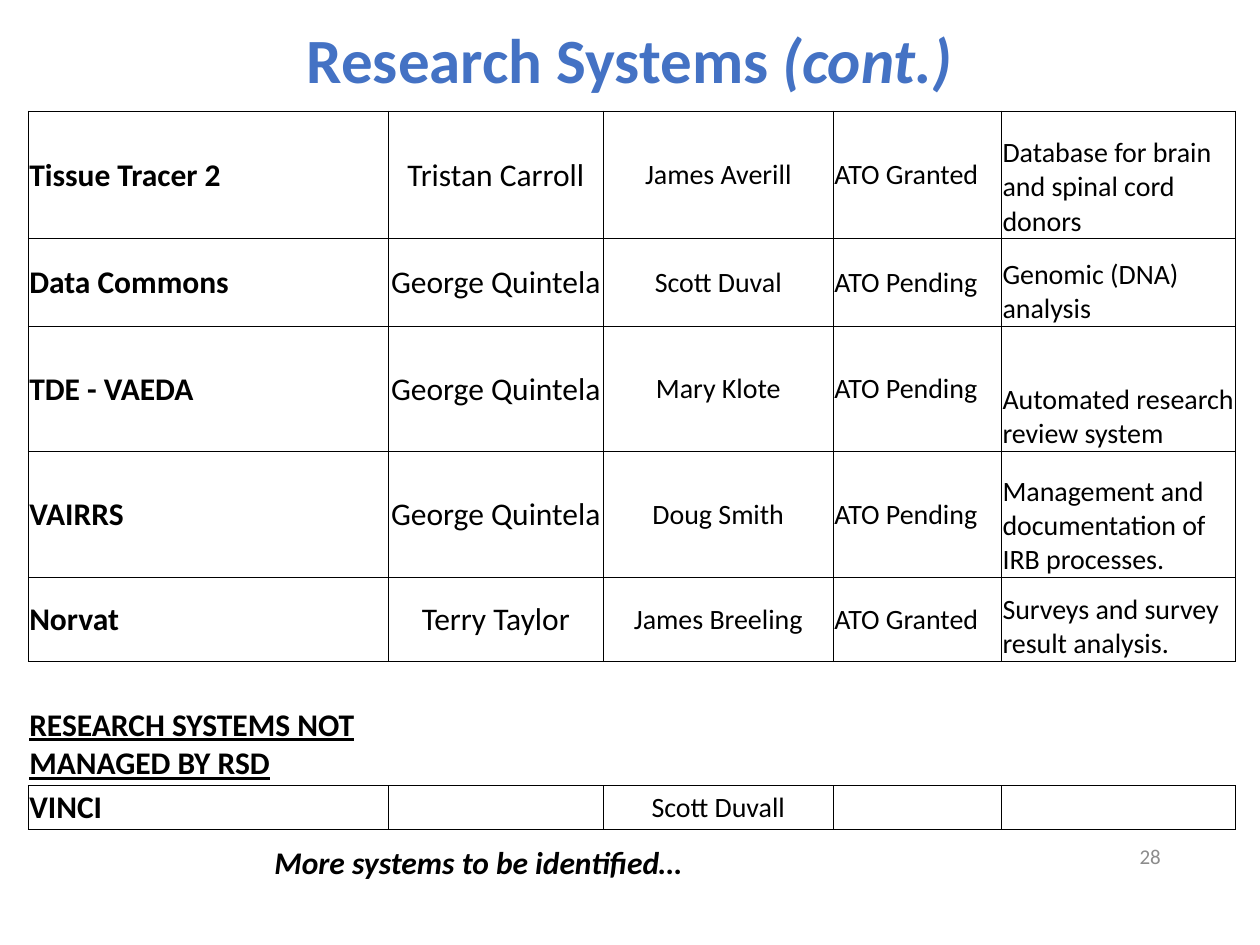
from typing import NamedTuple

from lxml import etree
from pptx import Presentation
from pptx import util as u
from pptx.dml.color import RGBColor
from pptx.enum import text
from pptx.oxml import ns

FONT = "Calibri"
BLACK, WHITE, BLUE, GREY = "000000", "FFFFFF", "4472C4", "8C8C8C"
LEFT, CENTER, RIGHT = text.PP_ALIGN.LEFT, text.PP_ALIGN.CENTER, text.PP_ALIGN.RIGHT
TOP, MIDDLE, BOTTOM = text.MSO_ANCHOR.TOP, text.MSO_ANCHOR.MIDDLE, text.MSO_ANCHOR.BOTTOM


class Run(NamedTuple):
    wording: str
    size: int
    color: str = BLACK
    bold: bool = False
    italic: bool = False
    underline: bool = False


class Label(NamedTuple):
    left: float
    top: float
    width: float
    height: float
    runs: list[Run]
    align: text.PP_ALIGN = LEFT
    anchor: text.MSO_ANCHOR = TOP
    line_spacing: float = 1.0


class Column(NamedTuple):
    width: float
    size: int
    align: text.PP_ALIGN = LEFT
    anchor: text.MSO_ANCHOR = MIDDLE
    bold: bool = False


class System(NamedTuple):
    height: float
    entries: tuple[str, ...] = ()
    edges: str = "LRTB"
    underline: bool = False


LABELS = [
    Label(1.73, 0.33, 21.92, 1.9,
          [Run("Research Systems ", 36, BLUE, bold=True),
           Run("(cont.)", 36, BLUE, bold=True, italic=True)],
          CENTER, MIDDLE, 0.9),
    Label(17.93, 16.74, 5.72, 1.02, [Run("28", 12, GREY)], RIGHT, MIDDLE),
    Label(5.28, 16.87, 17.15, 1.02,
          [Run("More systems to be identified…", 18, bold=True, italic=True)]),
]

# System, two contacts, authorization status, purpose
COLUMNS = [
    Column(7.26, 18, bold=True),
    Column(4.33, 18, CENTER),
    Column(4.64, 16, CENTER),
    Column(3.39, 16),
    Column(4.72, 16, anchor=BOTTOM),
]

SYSTEMS = [
    System(2.57, ("Tissue Tracer 2", "Tristan Carroll", "James Averill", "ATO Granted",
                  "Database for brain and spinal cord donors")),
    System(1.77, ("Data Commons", "George Quintela", "Scott Duval", "ATO Pending",
                  "Genomic (DNA) analysis")),
    System(2.52, ("TDE - VAEDA", "George Quintela", "Mary Klote", "ATO Pending",
                  "Automated research review system")),
    System(2.54, ("VAIRRS", "George Quintela", "Doug Smith", "ATO Pending",
                  "Management and documentation of IRB processes.")),
    System(1.69, ("Norvat", "Terry Taylor", "James Breeling", "ATO Granted",
                  "Surveys and survey result analysis.")),
    System(0.84, edges="T"),
    System(1.67, ("RESEARCH SYSTEMS NOT MANAGED BY RSD",), edges="B", underline=True),
    System(0.88, ("VINCI", "", "Scott Duvall")),
]


def rgb(color: str) -> RGBColor:
    return RGBColor.from_string(color)


def add_run(paragraph, run: Run) -> None:
    piece = paragraph.add_run()
    piece.text = run.wording
    font = piece.font
    font.name, font.size = FONT, u.Pt(run.size)
    font.bold, font.italic, font.underline = run.bold, run.italic, run.underline
    font.color.rgb = rgb(run.color)


def add_label(slide, label: Label) -> None:
    box = slide.shapes.add_textbox(u.Cm(label.left), u.Cm(label.top),
                                   u.Cm(label.width), u.Cm(label.height))
    frame = box.text_frame
    frame.word_wrap = True
    frame.vertical_anchor = label.anchor
    paragraph = frame.paragraphs[0]
    paragraph.alignment = label.align
    paragraph.line_spacing = label.line_spacing
    for run in label.runs:
        add_run(paragraph, run)


def set_borders(cell, edges: str) -> None:
    properties = cell._tc.get_or_add_tcPr()
    for side in "LRTB":
        line = etree.SubElement(properties, ns.qn(f"a:ln{side}"), w=str(u.Pt(0.5)))
        if side in edges:
            fill = etree.SubElement(line, ns.qn("a:solidFill"))
            etree.SubElement(fill, ns.qn("a:srgbClr"), val=BLACK)
        else:
            etree.SubElement(line, ns.qn("a:noFill"))


def fill_cell(cell, column: Column, system: System, entry: str) -> None:
    set_borders(cell, system.edges)
    cell.fill.solid()
    cell.fill.fore_color.rgb = rgb(WHITE)
    cell.margin_left = cell.margin_right = cell.margin_top = u.Cm(0.02)
    cell.margin_bottom = 0
    cell.vertical_anchor = column.anchor
    paragraph = cell.text_frame.paragraphs[0]
    paragraph.alignment = column.align
    if entry:
        add_run(paragraph, Run(entry, column.size, bold=column.bold,
                               underline=system.underline))
    else:
        paragraph.font.size = u.Pt(column.size)


def add_systems_table(slide, left: float, top: float) -> None:
    width = sum(column.width for column in COLUMNS)
    height = sum(system.height for system in SYSTEMS)
    table = slide.shapes.add_table(len(SYSTEMS), len(COLUMNS), u.Cm(left), u.Cm(top),
                                   u.Cm(width), u.Cm(height)).table
    table.first_row = table.horz_banding = False
    for index, column in enumerate(COLUMNS):
        table.columns[index].width = u.Cm(column.width)
    for row, system in enumerate(SYSTEMS):
        table.rows[row].height = u.Cm(system.height)
        for index, column in enumerate(COLUMNS):
            entry = system.entries[index] if index < len(system.entries) else ""
            fill_cell(table.cell(row, index), column, system, entry)


def main() -> None:
    deck = Presentation()
    deck.slide_width, deck.slide_height = u.Cm(25.4), u.Cm(19.05)
    slide = deck.slides.add_slide(deck.slide_layouts[6])

    # Research systems
    add_systems_table(slide, 0.57, 2.24)

    # Title, page number and closing remark
    for label in LABELS:
        add_label(slide, label)

    deck.save("out.pptx")


if __name__ == "__main__":
    main()
